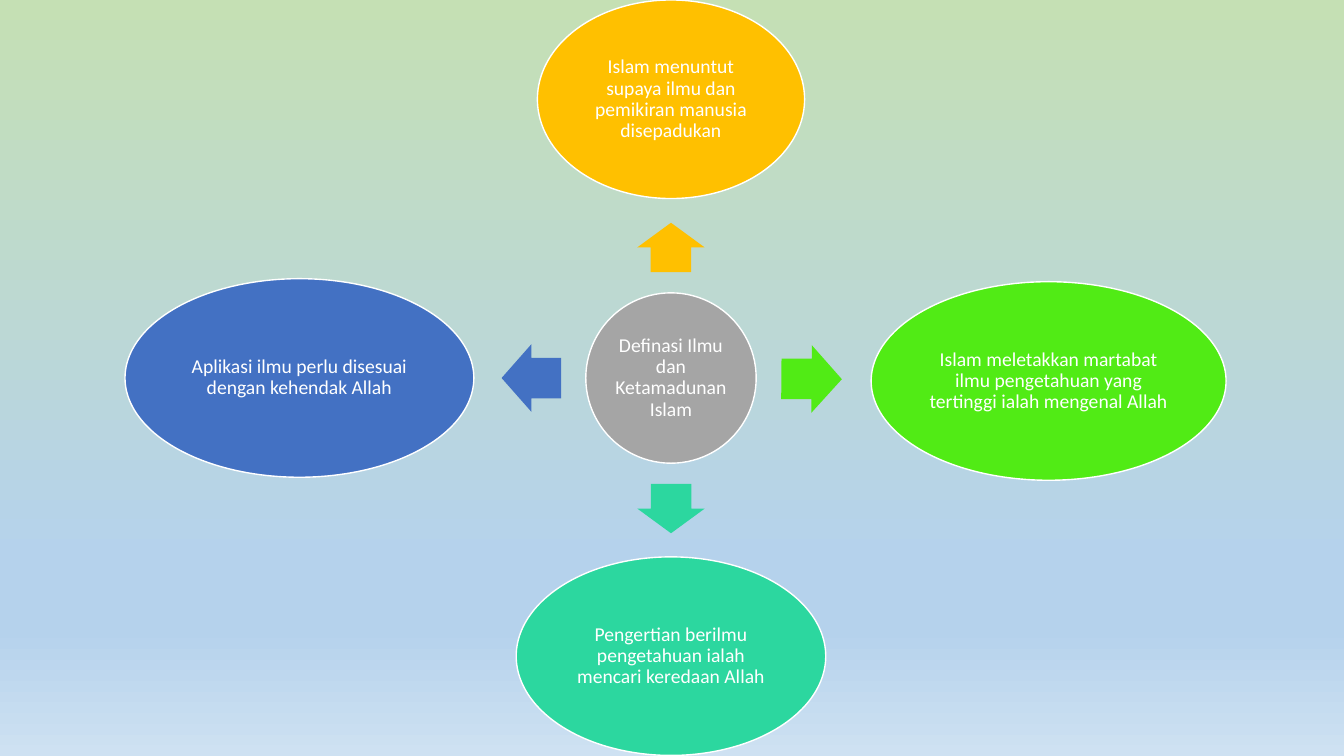
import copy

import pptx
import pptx.dml.color
import pptx.enum.shapes
import pptx.enum.text
import pptx.util

Inches = pptx.util.Inches
Pt = pptx.util.Pt
Shape = pptx.enum.shapes.MSO_SHAPE


def colour(value):
    return pptx.dml.color.RGBColor.from_string(value)


class Diagram:
    font = "Calibri"
    size = 14
    white = "FFFFFF"
    inset = 0.02

    def __init__(self, page):
        self.page = page

    def background(self, stops):
        fill = self.page.background.fill
        fill.gradient()
        fill.gradient_angle = 270
        stop_list = self.page.element.xpath(".//a:gsLst")[0]
        while len(stop_list) < len(stops):
            stop_list.append(copy.deepcopy(stop_list[0]))
        for stop, (position, value) in zip(fill.gradient_stops, stops):
            stop.position = position
            stop.color.rgb = colour(value)

    def shape(self, kind, centre, size, fill):
        (x, y), (width, height) = centre, size
        shape = self.page.shapes.add_shape(
            kind, Inches(x - width / 2), Inches(y - height / 2),
            Inches(width), Inches(height))
        shape.shadow.inherit = False
        shape.fill.solid()
        shape.fill.fore_color.rgb = colour(fill)
        return shape

    def oval(self, centre, size, fill, text):
        oval = self.shape(Shape.OVAL, centre, size, fill)
        oval.line.color.rgb = colour(self.white)
        oval.line.width = Pt(1)
        box = oval.text_frame
        box.word_wrap = True
        box.vertical_anchor = pptx.enum.text.MSO_ANCHOR.MIDDLE
        box.margin_left = box.margin_right = Inches(self.inset)
        box.margin_top = box.margin_bottom = Inches(self.inset)
        para = box.paragraphs[0]
        para.alignment = pptx.enum.text.PP_ALIGN.CENTER
        para.line_spacing = 0.9
        span = para.add_run()
        span.text = text
        span.font.name = self.font
        span.font.size = Pt(self.size)
        span.font.color.rgb = colour(self.white)

    def arrow(self, centre, length, rotation, fill):
        arrow = self.shape(Shape.RIGHT_ARROW, centre, (length, 0.67), fill)
        arrow.adjustments[0] = 0.6
        arrow.adjustments[1] = 0.5
        arrow.rotation = rotation
        arrow.line.fill.background()


def main():
    deck = pptx.Presentation()
    deck.slide_width = Inches(13.33)
    deck.slide_height = Inches(7.5)
    diagram = Diagram(deck.slides.add_slide(deck.slide_layouts[6]))
    diagram.background([(0, "C5E0B4"), (0.74, "B5D2EC"),
                        (0.83, "B5D2EC"), (1, "CEE1F2")])

    middle = 6.655
    diagram.oval((middle, 3.75), (1.69, 1.69), "A5A5A5",
                 "Definasi Ilmu dan Ketamadunan Islam")
    branches = [
        ("FFC000", (middle, 0.985), 2.65, (middle, 2.455), 0.49, 270,
         "Islam menuntut supaya ilmu dan pemikiran manusia disepadukan"),
        ("51EB15", (10.4, 3.78), 3.52, (8.05, 3.76), 0.6, 0.4,
         "Islam meletakkan martabat ilmu pengetahuan yang tertinggi "
         "ialah mengenal Allah"),
        ("2CD79F", (middle, 6.51), 3.07, (middle, 5.045), 0.49, 90,
         "Pengertian berilmu pengetahuan ialah mencari keredaan Allah"),
        ("4371C3", (2.97, 3.75), 3.46, (5.27, 3.75), 0.59, 180,
         "Aplikasi ilmu perlu disesuai dengan kehendak Allah"),
    ]
    for fill, centre, width, arrow_centre, length, rotation, text in branches:
        diagram.arrow(arrow_centre, length, rotation, fill)
        diagram.oval(centre, (width, 1.97), fill, text)

    deck.save("out.pptx")


if __name__ == "__main__":
    main()
